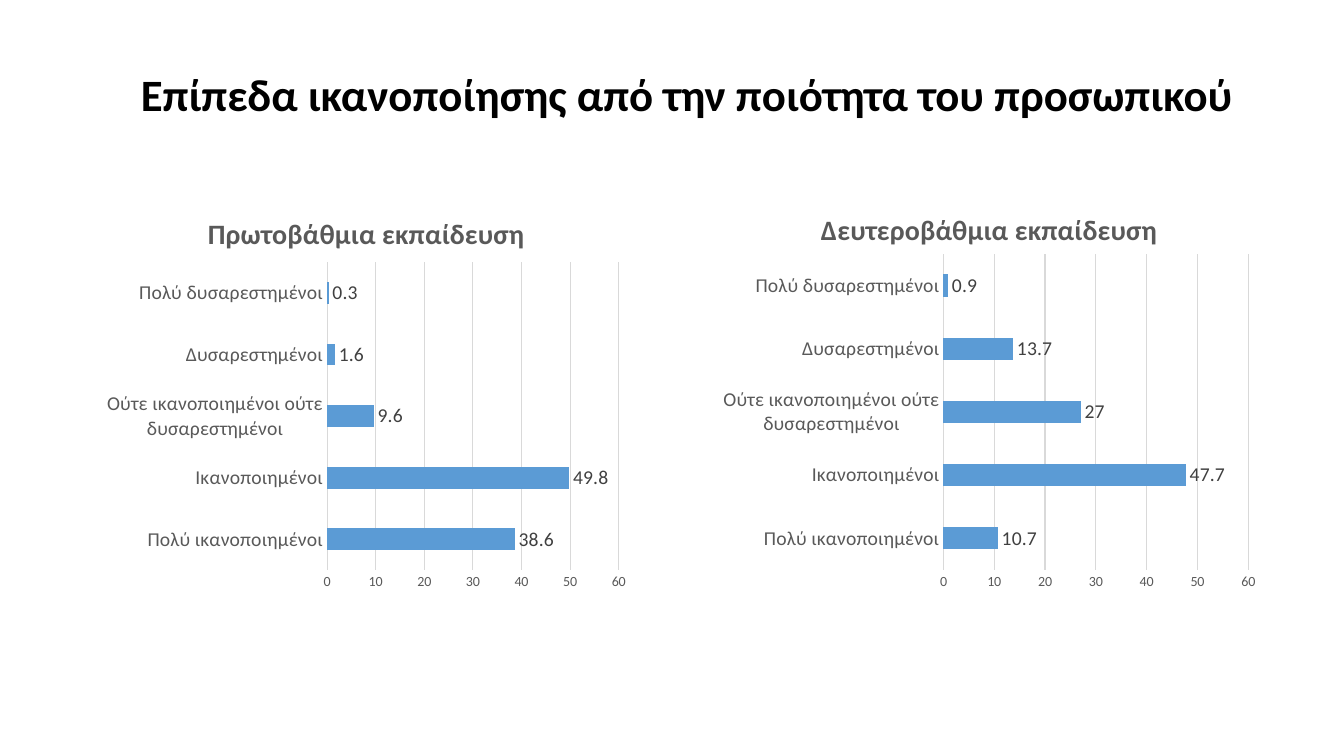
from dataclasses import dataclass

from lxml import etree
from pptx import Presentation
from pptx.chart.data import CategoryChartData
from pptx.dml.color import RGBColor
from pptx.enum.chart import XL_CHART_TYPE, XL_LABEL_POSITION, XL_TICK_MARK
from pptx.enum.text import MSO_ANCHOR
from pptx.oxml.ns import qn
from pptx.util import Pt

BAR_CLUSTERED = XL_CHART_TYPE.BAR_CLUSTERED
OUTSIDE_END = XL_LABEL_POSITION.OUTSIDE_END
NO_TICKS = XL_TICK_MARK.NONE
MIDDLE = MSO_ANCHOR.MIDDLE


@dataclass(frozen=True)
class Theme:
    """Colours, font and type sizes of the slide."""

    font: str = "Calibri"
    black: RGBColor = RGBColor(0x00, 0x00, 0x00)
    axis_text: RGBColor = RGBColor(0x59, 0x59, 0x59)
    label_text: RGBColor = RGBColor(0x40, 0x40, 0x40)
    rule: RGBColor = RGBColor(0xD9, 0xD9, 0xD9)
    bar: RGBColor = RGBColor(0x5B, 0x9B, 0xD5)
    heading_size: int = 32
    chart_title_size: int = 20
    label_size: int = 14
    scale_size: int = 10
    rule_width: float = 0.75


@dataclass(frozen=True)
class SatisfactionChart:
    """One chart: frame in points, inner layouts as fractions of the frame."""

    title: str
    values: tuple
    left: float
    width: float
    title_layout: dict
    plot_layout: dict


THEME = Theme()
CHART_TOP, CHART_HEIGHT = 134.64, 293.04
HEADING = "Επίπεδα ικανοποίησης από την ποιότητα του προσωπικού"
CATEGORIES = (
    "Πολύ ικανοποιημένοι",
    "Ικανοποιημένοι",
    "Ούτε ικανοποιημένοι ούτε δυσαρεστημένοι",
    "Δυσαρεστημένοι",
    "Πολύ δυσαρεστημένοι",
)
CHARTS = (
    SatisfactionChart(
        "Πρωτοβάθμια εκπαίδευση", (38.6, 49.8, 9.6, 1.6, 0.3), 67.68, 385.92,
        {"x": 0.2, "y": 0.05}, {"x": 0.43, "y": 0.18, "w": 0.54, "h": 0.75},
    ),
    SatisfactionChart(
        "Δευτεροβάθμια εκπαίδευση", (10.7, 47.7, 27, 13.7, 0.9), 507.6, 396,
        {"x": 0.19, "y": 0.04}, {"x": 0.42, "y": 0.16, "w": 0.55, "h": 0.77},
    ),
)


def style_font(font, size, color, bold=False):
    """Apply the theme font with a size, colour and weight."""
    font.name = THEME.font
    font.size = Pt(size)
    font.bold = bold
    font.color.rgb = color


def style_rule(line):
    """Draw a line as a thin pale rule."""
    line.color.rgb = THEME.rule
    line.width = Pt(THEME.rule_width)


def set_layout(parent, fractions, inner=False):
    """Place a chart part by fractions of the chart frame."""
    layout = parent.find(qn("c:layout"))
    if layout is None:
        layout = etree.Element(qn("c:layout"))
        parent.insert(0, layout)
    manual = etree.SubElement(layout, qn("c:manualLayout"))
    settings = [("layoutTarget", "inner")] if inner else []
    settings += [("xMode", "edge"), ("yMode", "edge"), *fractions.items()]
    for tag, value in settings:
        etree.SubElement(manual, qn(f"c:{tag}")).set("val", str(value))


def add_heading(slide):
    """Add the slide heading."""
    box = slide.shapes.add_textbox(Pt(93.6), Pt(25.2), Pt(828), Pt(88.56))
    frame = box.text_frame
    frame.word_wrap = True
    frame.vertical_anchor = MIDDLE
    frame.text = HEADING
    paragraph = frame.paragraphs[0]
    paragraph.line_spacing = 0.9
    style_font(paragraph.runs[0].font, THEME.heading_size, THEME.black, bold=True)


def style_axes(chart):
    """Format the category and value axes."""
    category_axis, value_axis = chart.category_axis, chart.value_axis
    for axis, size in ((category_axis, THEME.label_size), (value_axis, THEME.scale_size)):
        axis.major_tick_mark = NO_TICKS
        axis.minor_tick_mark = NO_TICKS
        style_font(axis.tick_labels.font, size, THEME.axis_text)
    style_rule(category_axis.format.line)
    value_axis.format.line.fill.background()
    value_axis.minimum_scale = 0
    value_axis.maximum_scale = 60
    value_axis.major_unit = 10
    value_axis.has_major_gridlines = True
    style_rule(value_axis.major_gridlines.format.line)


def style_bars(plot):
    """Format the bars and their value labels."""
    plot.gap_width = 182
    plot.vary_by_categories = False
    fill = plot.series[0].format.fill
    fill.solid()
    fill.fore_color.rgb = THEME.bar
    plot.has_data_labels = True
    labels = plot.data_labels
    labels.show_value = True
    labels.position = OUTSIDE_END
    style_font(labels.font, THEME.label_size, THEME.label_text)


def add_satisfaction_chart(slide, content):
    """Add one titled bar chart of satisfaction levels."""
    data = CategoryChartData()
    data.categories = CATEGORIES
    data.add_series("Series 1", content.values)
    chart = slide.shapes.add_chart(
        BAR_CLUSTERED, Pt(content.left), Pt(CHART_TOP),
        Pt(content.width), Pt(CHART_HEIGHT), data,
    ).chart
    style_font(chart.font, THEME.scale_size, THEME.black)
    chart.has_legend = False
    chart.has_title = True
    frame = chart.chart_title.text_frame
    frame.text = content.title
    style_font(frame.paragraphs[0].runs[0].font, THEME.chart_title_size,
               THEME.axis_text, bold=True)
    style_axes(chart)
    style_bars(chart.plots[0])
    chart_element = chart.element.find(qn("c:chart"))
    set_layout(chart_element.find(qn("c:title")), content.title_layout)
    set_layout(chart_element.find(qn("c:plotArea")), content.plot_layout, inner=True)


def main():
    """Build and save the slide."""
    presentation = Presentation()
    presentation.slide_width = Pt(960)
    presentation.slide_height = Pt(540)
    slide = presentation.slides.add_slide(presentation.slide_layouts[6])
    add_heading(slide)
    for content in CHARTS:
        add_satisfaction_chart(slide, content)
    presentation.save("out.pptx")


if __name__ == "__main__":
    main()
